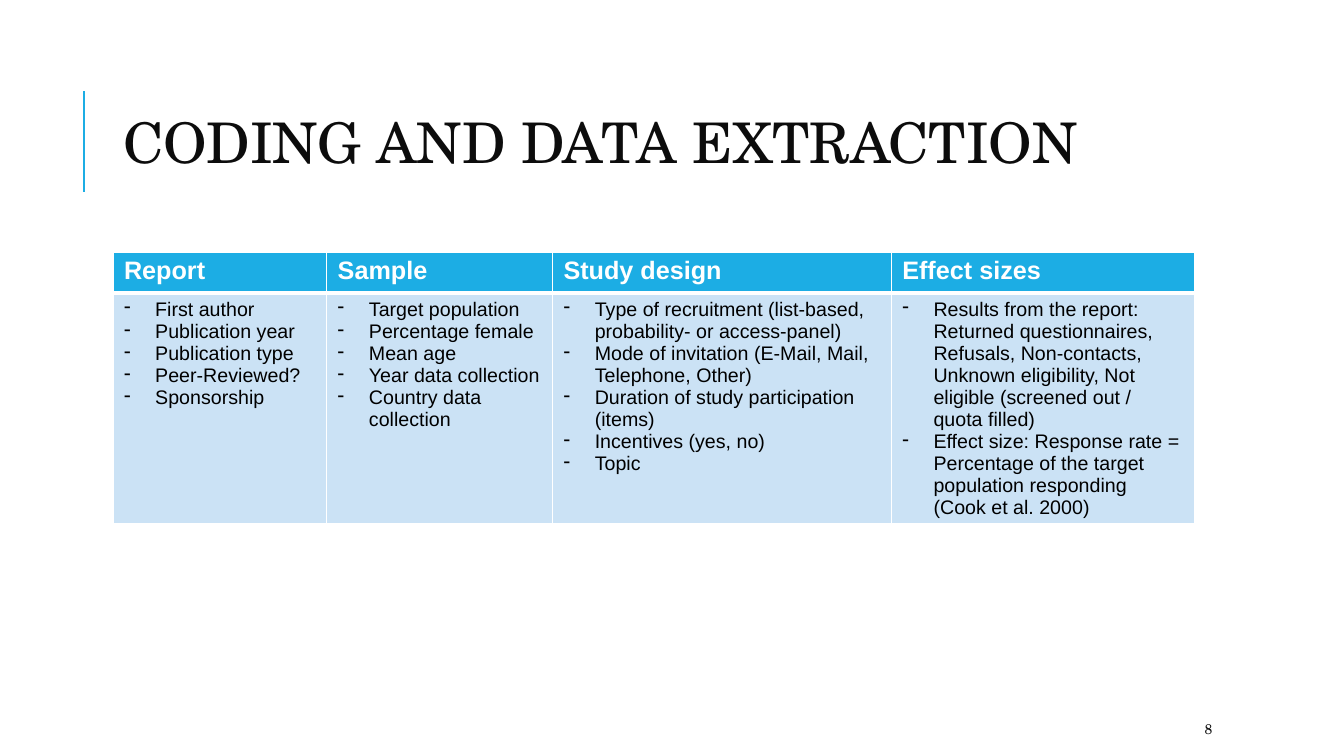
"""Build the slide on coding and data extraction."""
from lxml.etree import SubElement
from pptx import Presentation
from pptx.dml.color import RGBColor
from pptx.enum.shapes import MSO_CONNECTOR
from pptx.enum.text import MSO_ANCHOR, PP_ALIGN
from pptx.oxml.ns import qn
from pptx.util import Inches, Pt

HEADING_FONT = "TeX Gyre Schola"
BODY_FONT = "Arial"
ACCENT, PALE, INK, BLACK, WHITE = "1CADE4", "CBE2F5", "0C0C0C", "000000", "FFFFFF"
COLUMNS = [
    ("Report", 2.12, [
        "First author", "Publication year", "Publication type",
        "Peer-Reviewed?", "Sponsorship"]),
    ("Sample", 2.24, [
        "Target population", "Percentage female", "Mean age",
        "Year data collection", "Country data collection"]),
    ("Study design", 3.36, [
        "Type of recruitment (list-based, probability- or access-panel)",
        "Mode of invitation (E-Mail, Mail, Telephone, Other)",
        "Duration of study participation (items)",
        "Incentives (yes, no)", "Topic"]),
    ("Effect sizes", 3.01, [
        "Results from the report: Returned questionnaires, Refusals, "
        "Non-contacts, Unknown eligibility, Not eligible (screened out / "
        "quota filled)",
        "Effect size: Response rate = Percentage of the target population "
        "responding (Cook et al. 2000)"]),
]
ROW_HEIGHTS = [0.41, 2.28]


def color(value):
    return RGBColor.from_string(value)


def style_font(paragraph, name, size, value, bold=False):
    font = paragraph.font
    font.name, font.size, font.bold = name, Pt(size), bold
    font.color.rgb = color(value)


def place(shape, left, top, width, height):
    shape.left, shape.top = Inches(left), Inches(top)
    shape.width, shape.height = Inches(width), Inches(height)


def add_title(slide, text):
    title = slide.shapes.title
    place(title, 1.12, 0.64, 10.63, 1.64)
    frame = title.text_frame
    frame.text = text
    frame.word_wrap = True
    frame.vertical_anchor = MSO_ANCHOR.MIDDLE
    paragraph = frame.paragraphs[0]
    paragraph.alignment = PP_ALIGN.LEFT
    paragraph.line_spacing = 0.8
    style_font(paragraph, HEADING_FONT, 40, INK)


def add_title_rule(slide):
    rule = slide.shapes.add_connector(
        MSO_CONNECTOR.STRAIGHT, Inches(0.83), Inches(1.9), Inches(0.83), Inches(0.9))
    rule.line.color.rgb = color(ACCENT)
    rule.line.width = Pt(1.5)
    SubElement(rule._element.spPr, qn("a:effectLst"))


def add_bullet(paragraph):
    properties = paragraph._p.get_or_add_pPr()
    properties.set("marL", str(Inches(0.31)))
    properties.set("indent", str(Inches(-0.31)))
    bullet_color = SubElement(properties, qn("a:buClr"))
    SubElement(bullet_color, qn("a:srgbClr"), val=BLACK)
    SubElement(properties, qn("a:buChar"), char="-")


def format_cell(cell, fill, top, bottom):
    properties = cell._tc.get_or_add_tcPr()
    for side, width in (("L", 1), ("R", 1), ("T", top), ("B", bottom)):
        border = SubElement(properties, qn(f"a:ln{side}"), w=str(Pt(width)))
        border_fill = SubElement(border, qn("a:solidFill"))
        SubElement(border_fill, qn("a:srgbClr"), val=WHITE)
    cell.fill.solid()
    cell.fill.fore_color.rgb = color(fill)
    cell.margin_left = cell.margin_right = Inches(0.11)
    cell.margin_top = cell.margin_bottom = Inches(0.05)


def add_coding_table(slide):
    widths = [width for _, width, _ in COLUMNS]
    table = slide.shapes.add_table(
        len(ROW_HEIGHTS), len(COLUMNS), Inches(1.12), Inches(2.5),
        Inches(sum(widths)), Inches(sum(ROW_HEIGHTS))).table
    table.horz_banding = False
    for row, height in zip(table.rows, ROW_HEIGHTS):
        row.height = Inches(height)
    for index, (heading, width, items) in enumerate(COLUMNS):
        table.columns[index].width = Inches(width)
        header, body = table.cell(0, index), table.cell(1, index)
        format_cell(header, ACCENT, 1, 3)
        format_cell(body, PALE, 3, 1)
        header.text = heading
        style_font(header.text_frame.paragraphs[0], BODY_FONT, 18, WHITE, True)
        body.text = "\n".join(items)
        for paragraph in body.text_frame.paragraphs:
            add_bullet(paragraph)
            style_font(paragraph, BODY_FONT, 14, BLACK)


def add_page_number(slide, number):
    box = slide.shapes.add_textbox(
        Inches(11.85), Inches(7.08), Inches(1.06), Inches(0.3))
    frame = box.text_frame
    frame.word_wrap = True
    frame.vertical_anchor = MSO_ANCHOR.MIDDLE
    frame.text = number
    style_font(frame.paragraphs[0], HEADING_FONT, 10, INK)


def main():
    presentation = Presentation()
    presentation.slide_width = Inches(13.33)
    presentation.slide_height = Inches(7.5)
    slide = presentation.slides.add_slide(presentation.slide_layouts[5])
    add_title_rule(slide)
    add_title(slide, "CODING AND DATA EXTRACTION")
    add_coding_table(slide)
    add_page_number(slide, "8")
    presentation.save("out.pptx")


if __name__ == "__main__":
    main()
